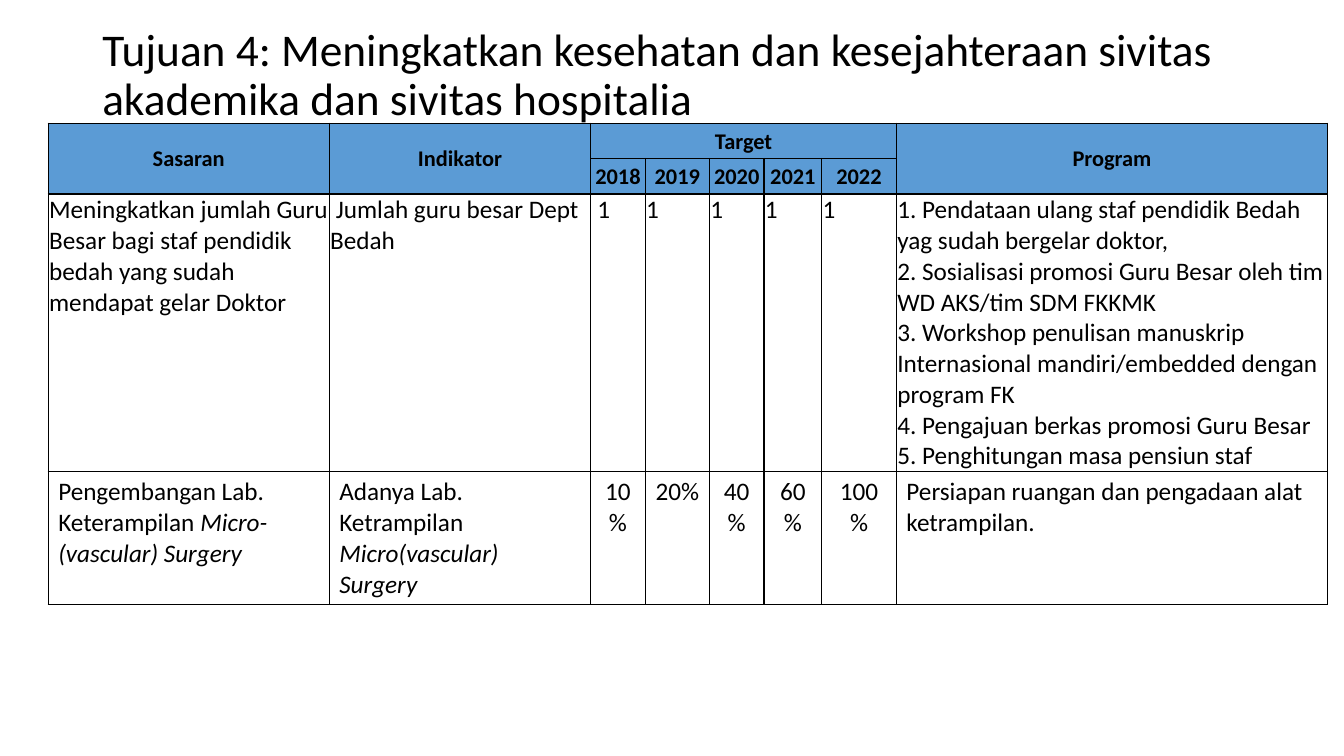
from pptx import Presentation
from pptx.dml.color import RGBColor
from pptx.enum.text import MSO_ANCHOR, PP_ALIGN
from pptx.oxml.ns import qn
from pptx.util import Pt
from lxml.etree import SubElement

TITLE = "Tujuan 4: Meningkatkan kesehatan dan kesejahteraan sivitas akademika dan sivitas hospitalia"
HEADERS = [
    ["Sasaran", "Indikator", "Target", "", "", "", "", "Program"],
    ["", "", "2018", "2019", "2020", "2021", "2022", ""],
]
GOALS = [
    [
        "Meningkatkan jumlah Guru Besar bagi staf pendidik bedah yang sudah mendapat gelar Doktor",
        " Jumlah guru besar Dept Bedah",
        " 1", "1", "1", "1", "1",
        [
            "1. Pendataan ulang staf pendidik Bedah yag sudah bergelar doktor,",
            "2. Sosialisasi promosi Guru Besar oleh tim WD AKS/tim SDM FKKMK",
            "3. Workshop penulisan manuskrip Internasional mandiri/embedded dengan program FK",
            "4. Pengajuan berkas promosi Guru Besar",
            "5. Penghitungan masa pensiun staf",
        ],
    ],
    [
        [("Pengembangan Lab. Keterampilan ", "Micro-(vascular) Surgery")],
        [("Adanya Lab. Ketrampilan ", "Micro(vascular) Surgery")],
        "10%", "20%", "40%", "60%", "100%",
        "Persiapan ruangan dan pengadaan alat ketrampilan.",
    ],
]
MERGES = [(0, 0, 1, 0), (0, 1, 1, 1), (0, 2, 0, 6), (0, 7, 1, 7)]
COL_WIDTHS = [200.8, 186.8, 38.9, 45.9, 39, 41.2, 53.4, 308]
ROW_HEIGHTS = [25.3, 25.3, 198.5, 95]
TABLE_LEFT, TABLE_TOP = 34.4, 88
TITLE_BOX = (66, 28.8, 828, 51.1)

THEME = {
    "font": "Calibri",
    "text": RGBColor(0, 0, 0),
    "header": RGBColor(0x5B, 0x9B, 0xD5),
    "border": "000000",
    "border_width": Pt(1),
    "title_size": Pt(32.4),
    "header_size": Pt(16),
    "body_size": Pt(18),
}
TIGHT = {"margin_left": Pt(0.7), "margin_right": Pt(0.7), "margin_top": Pt(0.7), "margin_bottom": 0}


def set_attrs(obj, values):
    for name, value in values.items():
        setattr(obj, name, value)


def add_run(p, text, size, **style):
    r = p.add_run()
    r.text = text
    set_attrs(r.font, {"name": THEME["font"], "size": size, **style})
    r.font.color.rgb = THEME["text"]


def write_cell(cell, content, size, bold, align):
    paragraphs = content if isinstance(content, list) else [content]
    tf = cell.text_frame
    for i, runs in enumerate(paragraphs):
        p = tf.add_paragraph() if i else tf.paragraphs[0]
        p.alignment = align
        for j, text in enumerate(runs if isinstance(runs, tuple) else (runs,)):
            add_run(p, text, size, bold=bold, italic=j > 0)


def add_borders(cell):
    tcPr = cell._tc.get_or_add_tcPr()
    for side in ("lnL", "lnR", "lnT", "lnB"):
        ln = SubElement(tcPr, qn("a:" + side), w=str(THEME["border_width"]))
        fill = SubElement(ln, qn("a:solidFill"))
        SubElement(fill, qn("a:srgbClr"), val=THEME["border"])


def add_title(s):
    tf = s.shapes.add_textbox(*map(Pt, TITLE_BOX)).text_frame
    set_attrs(tf, {"word_wrap": True, "vertical_anchor": MSO_ANCHOR.MIDDLE})
    p = tf.paragraphs[0]
    p.line_spacing = 0.9
    add_run(p, TITLE, THEME["title_size"])


def add_goal_table(s):
    rows = HEADERS + GOALS
    tbl = s.shapes.add_table(
        len(rows), len(COL_WIDTHS), Pt(TABLE_LEFT), Pt(TABLE_TOP),
        Pt(sum(COL_WIDTHS)), Pt(sum(ROW_HEIGHTS)),
    ).table
    set_attrs(tbl, {"first_row": False, "horz_banding": False})
    for col, width in zip(tbl.columns, COL_WIDTHS):
        col.width = Pt(width)
    for row, height in zip(tbl.rows, ROW_HEIGHTS):
        row.height = Pt(height)
    for r0, c0, r1, c1 in MERGES:
        tbl.cell(r0, c0).merge(tbl.cell(r1, c1))

    for i, row in enumerate(rows):
        header = i < len(HEADERS)
        last = i == len(rows) - 1
        for j, content in enumerate(row):
            cell = tbl.cell(i, j)
            add_borders(cell)
            if header:
                cell.fill.solid()
                cell.fill.fore_color.rgb = THEME["header"]
                cell.vertical_anchor = MSO_ANCHOR.MIDDLE
            else:
                cell.fill.background()
            if not last:
                set_attrs(cell, TIGHT)
            centred = header or (last and 2 <= j <= 6)
            if content:
                size = THEME["header_size" if header else "body_size"]
                write_cell(cell, content, size, header, PP_ALIGN.CENTER if centred else PP_ALIGN.LEFT)


def main():
    prs = Presentation()
    set_attrs(prs, {"slide_width": Pt(960), "slide_height": Pt(540)})
    s = prs.slides.add_slide(prs.slide_layouts[6])
    add_title(s)
    add_goal_table(s)
    prs.save("out.pptx")


if __name__ == "__main__":
    main()
